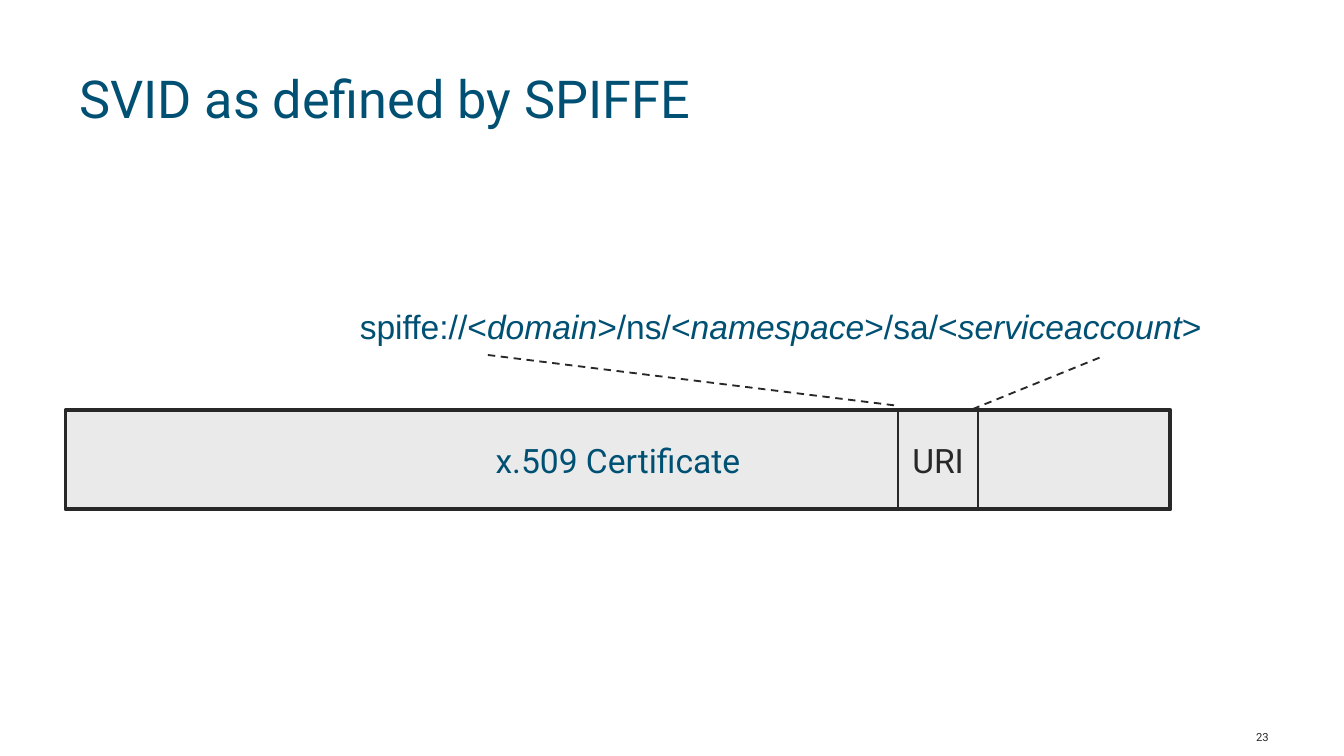
from dataclasses import dataclass

from lxml import etree
from pptx import Presentation
from pptx.dml.color import RGBColor
from pptx.enum.dml import MSO_LINE
from pptx.enum.shapes import MSO_CONNECTOR, MSO_SHAPE
from pptx.enum.text import MSO_ANCHOR, MSO_AUTO_SIZE, PP_ALIGN
from pptx.oxml.ns import qn
from pptx.util import Cm, Pt

LEFT, CENTER, RIGHT = PP_ALIGN.LEFT, PP_ALIGN.CENTER, PP_ALIGN.RIGHT
TOP, MIDDLE, BOTTOM = MSO_ANCHOR.TOP, MSO_ANCHOR.MIDDLE, MSO_ANCHOR.BOTTOM
RECT, STRAIGHT, DASH = MSO_SHAPE.RECTANGLE, MSO_CONNECTOR.STRAIGHT, MSO_LINE.DASH
NO_FIT, GROW = MSO_AUTO_SIZE.NONE, MSO_AUTO_SIZE.SHAPE_TO_FIT_TEXT


@dataclass(frozen=True)
class Theme:
    blue: RGBColor = RGBColor(0x00, 0x50, 0x73)
    dark: RGBColor = RGBColor(0x28, 0x28, 0x28)
    gray: RGBColor = RGBColor(0xEA, 0xEA, 0xEA)
    font: str = "Roboto"
    uri_font: str = "Arial"
    title: Pt = Pt(28)
    body: Pt = Pt(18)
    small: Pt = Pt(6)


theme = Theme()


def write(sp, runs, size, color, font=theme.font, align=LEFT, anchor=MIDDLE,
          wrap=True, fit=NO_FIT):
    """Fill a shape with one paragraph; every second run is italic."""
    tf = sp.text_frame
    tf.word_wrap, tf.auto_size, tf.vertical_anchor = wrap, fit, anchor
    p = tf.paragraphs[0]
    p.alignment = align
    p.font.name, p.font.size, p.font.color.rgb = font, size, color
    for i, text in enumerate(runs):
        r = p.add_run()
        r.text = text
        if i % 2:
            r.font.italic = True
    return p


prs = Presentation()
prs.slide_width, prs.slide_height = Cm(25.4), Cm(14.29)
s = prs.slides.add_slide(prs.slide_layouts[5])

# Title
title = s.shapes.title
title.left, title.top, title.width, title.height = Cm(1.24), Cm(0.53), Cm(22.94), Cm(2.03)
p = write(title, ["SVID as defined by SPIFFE"], theme.title, theme.blue, anchor=BOTTOM)
p.line_spacing = 0.8

# Slide number
number = s.shapes.add_textbox(Cm(23.24), Cm(13.56), Cm(0.99), Cm(0.76))
write(number, ["23"], theme.small, theme.dark, align=RIGHT)

# URI pattern, with its variable parts in italics
pattern = s.shapes.add_textbox(Cm(6.55), Cm(5.66), Cm(17.17), Cm(1.02))
write(pattern, ["spiffe://<", "domain", ">/ns/<", "namespace", ">/sa/<", "serviceaccount", ">"],
      theme.body, theme.blue, font=theme.uri_font, anchor=TOP, fit=GROW)

# Certificate bar and the URI field inside it
bar_top, bar_height = Cm(7.75), Cm(1.88)
for text, left, width, fill, line, color, wrap in [
    ("x.509 Certificate", 1.24, 20.88, theme.gray, 2, theme.blue, True),
    ("URI", 16.97, 1.52, None, 1, theme.dark, False),
]:
    sp = s.shapes.add_shape(RECT, Cm(left), bar_top, Cm(width), bar_height)
    sp.shadow.inherit = False
    if fill is None:
        sp.fill.background()
    else:
        sp.fill.solid()
        sp.fill.fore_color.rgb = fill
    sp.line.color.rgb, sp.line.width = theme.dark, Pt(line)
    write(sp, [text], theme.body, color, align=CENTER, wrap=wrap)

# Dashed lines from the pattern down to the URI field
for ends in [(9.22, 6.71, 16.97, 7.67), (20.78, 6.76, 18.34, 7.75)]:
    cxn = s.shapes.add_connector(STRAIGHT, *map(Cm, ends))
    cxn.line.color.rgb, cxn.line.width = theme.dark, Pt(1)
    cxn.line.dash_style = DASH
    etree.SubElement(cxn._element.spPr, qn("a:effectLst"))

prs.save("out.pptx")
